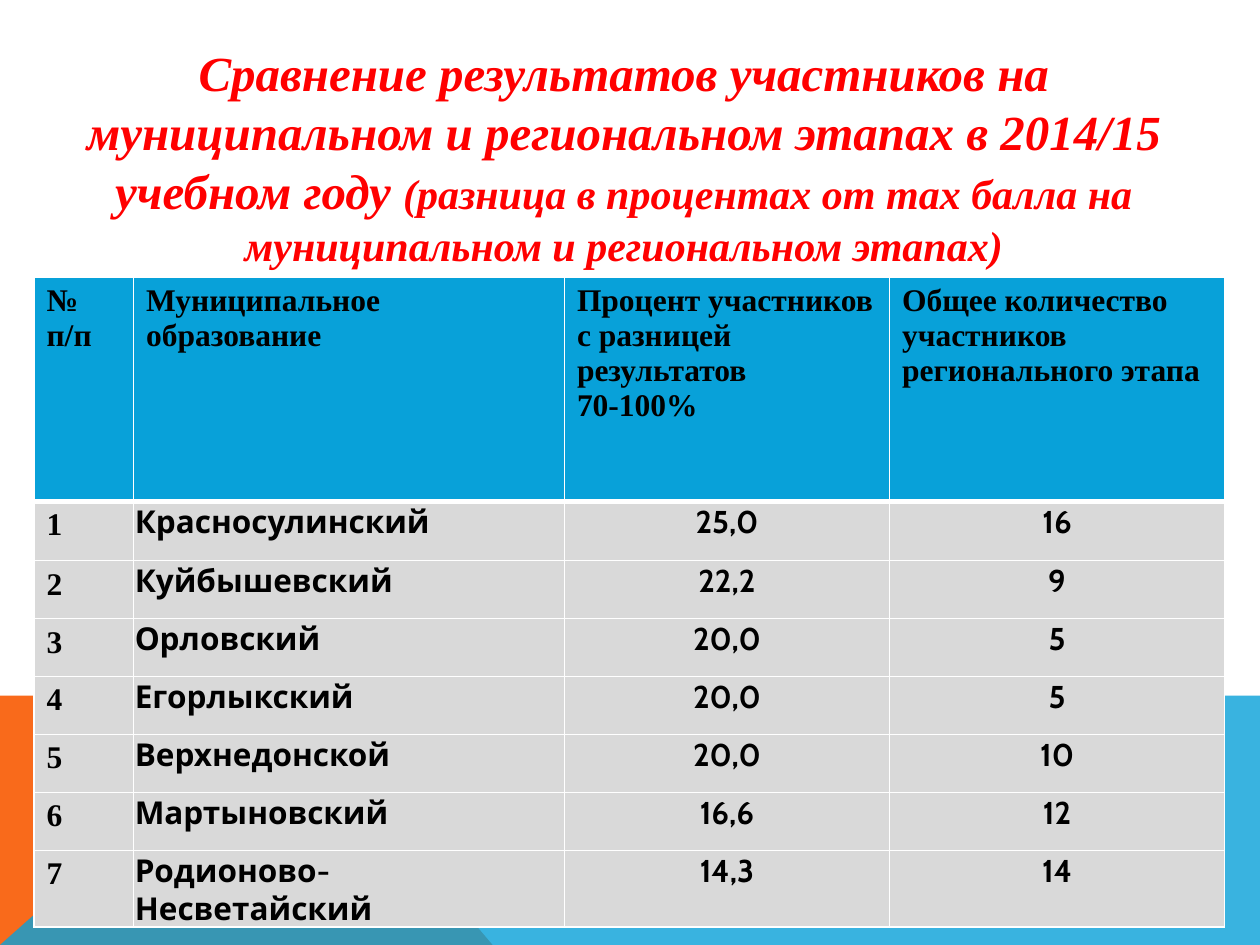
from dataclasses import dataclass

from lxml.etree import SubElement
from pptx import Presentation
from pptx.dml.color import RGBColor
from pptx.enum.text import MSO_ANCHOR, PP_ALIGN
from pptx.oxml.ns import qn
from pptx.util import Inches, Pt


@dataclass(frozen=True)
class Theme:
    orange: RGBColor = RGBColor(0xF9, 0x6A, 0x1B)
    blue: RGBColor = RGBColor(0x08, 0xA1, 0xD9)
    grey: RGBColor = RGBColor(0xD9, 0xD9, 0xD9)
    red: RGBColor = RGBColor(0xFF, 0, 0)
    black: RGBColor = RGBColor(0, 0, 0)
    white: RGBColor = RGBColor(0xFF, 0xFF, 0xFF)
    serif: str = "Times New Roman"
    sans: str = "Cabin"
    title_size: Pt = Pt(28)
    subtitle_size: Pt = Pt(24)
    table_size: Pt = Pt(18)


THEME = Theme()

TITLE = "Сравнение результатов участников на муниципальном и региональном этапах в 2014/15 учебном году "
SUBTITLE = "(разница в процентах от max балла на муниципальном и региональном этапах)"
HEADERS = [
    "№ п/п",
    "Муниципальное образование",
    "Процент участников с разницей результатов\n70-100%",
    "Общее количество участников регионального этапа",
]
DISTRICTS = [
    ("Красносулинский", "25,0", "16"),
    ("Куйбышевский", "22,2", "9"),
    ("Орловский", "20,0", "5"),
    ("Егорлыкский", "20,0", "5"),
    ("Верхнедонской", "20,0", "10"),
    ("Мартыновский", "16,6", "12"),
    ("Родионово-Несветайский", "14,3", "14"),
]
COLUMN_WIDTHS = [0.79, 3.42, 2.58, 2.66]
ROW_HEIGHTS = [1.78, 0.47] + [0.46] * (len(DISTRICTS) - 1)


def apply_format(target, values):
    for name, value in values.items():
        setattr(target, name, value)


def format_font(font, color, **values):
    apply_format(font, {"bold": True, **values})
    font.color.rgb = color


def add_band(slide, points, color, opacity=100):
    corners = [(Inches(x), Inches(y)) for x, y in points]
    builder = slide.shapes.build_freeform(*corners[0], scale=1.0)
    builder.add_line_segments(corners[1:], close=True)
    shape = builder.convert_to_shape()
    shape.shadow.inherit = False
    shape.fill.solid()
    shape.fill.fore_color.rgb = color
    shape.line.fill.background()
    if opacity < 100:
        color_element = shape.fill._xPr.find(qn("a:solidFill"))[0]
        SubElement(color_element, qn("a:alpha"), val=str(opacity * 1000))


def add_title(slide):
    box = slide.shapes.add_textbox(Inches(0.54), Inches(0.28), Inches(8.82), Inches(1.92))
    apply_format(box.text_frame, {"word_wrap": True, "vertical_anchor": MSO_ANCHOR.MIDDLE})
    paragraph = box.text_frame.paragraphs[0]
    paragraph.alignment = PP_ALIGN.CENTER
    for text, size in ((TITLE, THEME.title_size), (SUBTITLE, THEME.subtitle_size)):
        run = paragraph.add_run()
        run.text = text
        format_font(run.font, THEME.red, name=THEME.serif, size=size, italic=True)


def set_borders(cell, bottom_width):
    properties = cell._tc.get_or_add_tcPr()
    for position, side in enumerate("LRTB"):
        width = bottom_width if side == "B" else Pt(1)
        line = SubElement(properties, qn(f"a:ln{side}"), w=str(width))
        fill = SubElement(line, qn("a:solidFill"))
        SubElement(fill, qn("a:srgbClr"), val=str(THEME.white))
        properties.insert(position, line)


def fill_cell(cell, text, color, font_name, alignment=PP_ALIGN.LEFT, tight=False, bottom_width=Pt(1)):
    cell.text = text
    cell.fill.solid()
    cell.fill.fore_color.rgb = color
    if tight:
        margin = Inches(0.01)
        apply_format(cell, {"margin_left": margin, "margin_right": margin,
                            "margin_top": margin, "margin_bottom": 0})
    for paragraph in cell.text_frame.paragraphs:
        paragraph.alignment = alignment
        for run in paragraph.runs:
            format_font(run.font, THEME.black, name=font_name, size=THEME.table_size)
    set_borders(cell, bottom_width)


def add_results_table(slide):
    table = slide.shapes.add_table(
        len(ROW_HEIGHTS), len(COLUMN_WIDTHS), Inches(0.27), Inches(2.2),
        Inches(sum(COLUMN_WIDTHS)), Inches(sum(ROW_HEIGHTS))).table
    for column, width in zip(table.columns, COLUMN_WIDTHS):
        column.width = Inches(width)
    for row, height in zip(table.rows, ROW_HEIGHTS):
        row.height = Inches(height)

    for column, text in enumerate(HEADERS):
        fill_cell(table.cell(0, column), text, THEME.blue, THEME.serif, bottom_width=Pt(3))
    for number, (district, *figures) in enumerate(DISTRICTS, start=1):
        fill_cell(table.cell(number, 0), str(number), THEME.grey, THEME.serif)
        fill_cell(table.cell(number, 1), district, THEME.grey, THEME.sans, tight=True)
        for column, figure in enumerate(figures, start=2):
            fill_cell(table.cell(number, column), figure, THEME.grey, THEME.sans,
                      PP_ALIGN.CENTER, tight=True)


def main():
    presentation = Presentation()
    apply_format(presentation, {"slide_width": Inches(10), "slide_height": Inches(7.5)})
    slide = presentation.slides.add_slide(presentation.slide_layouts[6])
    add_band(slide, [(0, 7.5), (0, 5.52), (2.23, 5.52), (3.91, 7.5)], THEME.orange)
    add_band(slide, [(0, 7.5), (2.23, 5.52), (10, 5.52), (10, 7.5)], THEME.blue, opacity=80)
    add_title(slide)
    add_results_table(slide)
    presentation.save("out.pptx")


if __name__ == "__main__":
    main()
